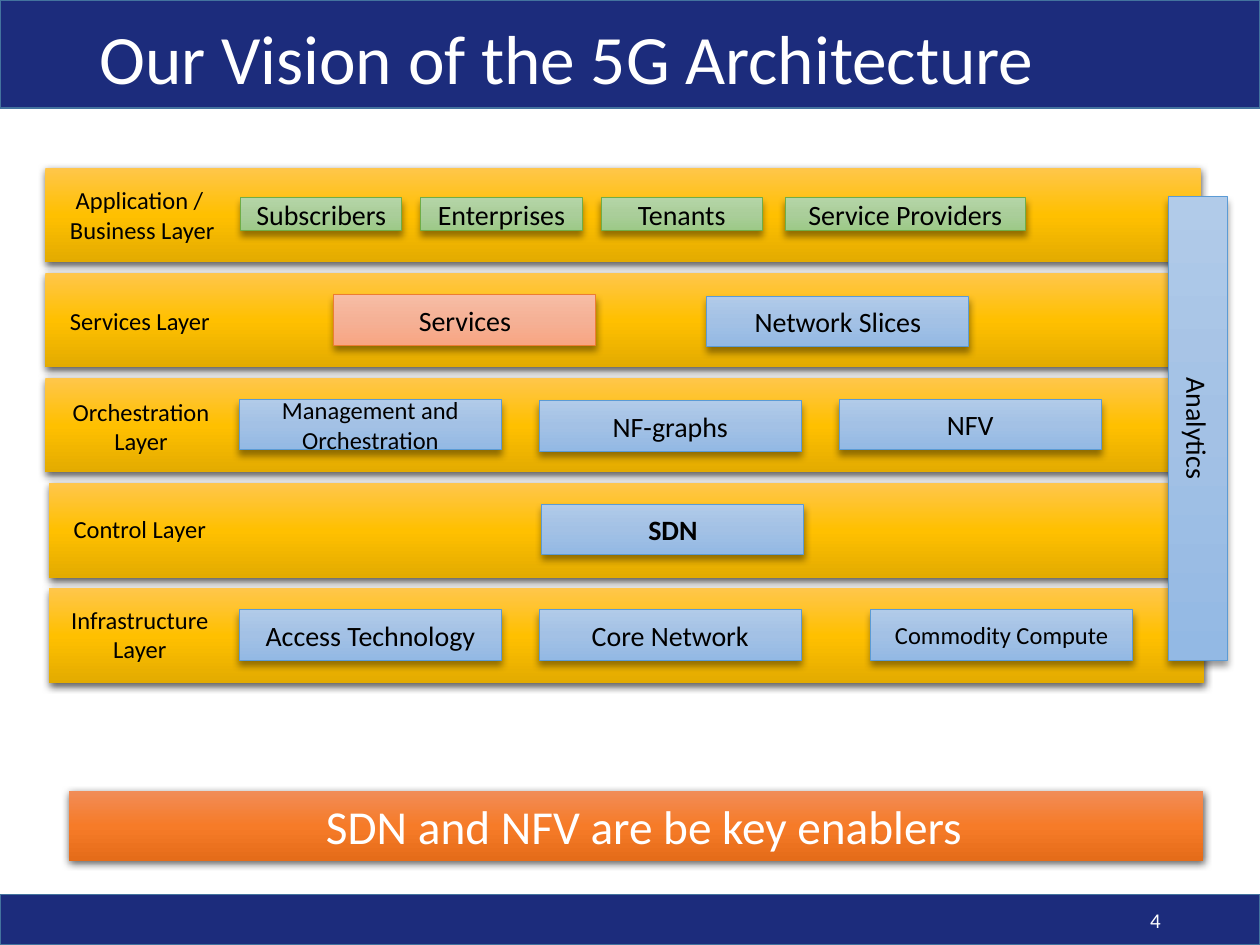
from lxml.etree import SubElement
from pptx import Presentation
from pptx.dml.color import RGBColor
from pptx.enum.shapes import MSO_SHAPE
from pptx.enum.text import MSO_ANCHOR, MSO_AUTO_SIZE, PP_ALIGN
from pptx.oxml.ns import qn
from pptx.util import Inches, Pt

COLORS = {"navy": "1C2C7C", "edge": "43739E", "white": "FFFFFF", "black": "000000",
          "blue": "5B9BD5", "green": "70AD47", "red": "ED7D31"}
FADES = {"gold": ("FFC64B", "FFC000", "E3AB00"), "orange": ("F18C57", "F67B28", "E56C19"),
         "blue": ("B1CBE9", "A3C1E5", "93B9E4"), "green": ("B5D5A7", "AACE9A", "9CC987"),
         "red": ("F7BDA5", "F5B196", "F8A582")}
WIDE, HIGH = 2.08, 0.4
LAYERS = [
    (0.36, "Application / \nBusiness Layer", (0.45, 1.42, 1.36, 0.57),
     [("Subscribers", 1.91, 1.57, 1.28, 0.26, "green", 16),
      ("Enterprises", 3.34, 1.57, 1.28, 0.26, "green", 16),
      ("Tenants", 4.77, 1.57, 1.28, 0.26, "green", 16),
      ("Service Providers", 6.23, 1.57, 1.91, 0.26, "green", 16)]),
    (0.36, "Services Layer", (0.45, 2.38, 1.32, 0.34),
     [("Services", 2.65, 2.34, WIDE, HIGH, "red", 16),
      ("Network Slices", 5.61, 2.35, WIDE, HIGH, "blue", 16)]),
    (0.36, "Orchestration\vLayer", (0.47, 3.1, 1.3, 0.57),
     [("Management and\vOrchestration", 1.9, 3.17, WIDE, HIGH, "blue", 14),
      ("NF-graphs", 4.28, 3.18, WIDE, HIGH, "blue", 16),
      ("NFV", 6.66, 3.17, WIDE, HIGH, "blue", 16)]),
    (0.39, "Control Layer", (0.48, 4.03, 1.26, 0.34),
     [("SDN", 4.3, 4, WIDE, HIGH, "blue", 16)]),
    (0.39, "Infrastructure\vLayer", (0.46, 4.75, 1.3, 0.57),
     [("Access Technology", 1.9, 4.84, WIDE, HIGH, "blue", 16),
      ("Core Network", 4.28, 4.84, WIDE, HIGH, "blue", 16),
      ("Commodity Compute", 6.91, 4.84, WIDE, HIGH, "blue", 14)]),
]


def paint(shape, fade):
    """Fill a shape with a three-stop vertical gradient."""
    shape.fill.gradient()
    shape.fill.gradient_angle = 270
    stops = shape._element.spPr.find(qn("a:gradFill")).find(qn("a:gsLst"))
    for stop in list(stops):
        stops.remove(stop)
    for spot, tone in zip((0, 50000, 100000), FADES[fade]):
        stop = SubElement(stops, qn("a:gs"), pos=str(spot))
        SubElement(stop, qn("a:srgbClr"), val=tone)


def shade(shape, blur, dist, alpha):
    """Give a shape a soft black shadow that falls downward."""
    shape.shadow.inherit = False
    group = shape._element.spPr.find(qn("a:effectLst"))
    drop = SubElement(group, qn("a:outerShdw"), blurRad=str(Pt(blur)), dist=str(Pt(dist)),
                      dir="5400000", algn="ctr", rotWithShape="0")
    tone = SubElement(drop, qn("a:srgbClr"), val=COLORS["black"])
    SubElement(tone, qn("a:alpha"), val=str(alpha * 1000))


def write(shape, text, size, color="black", align=PP_ALIGN.CENTER, anchor=MSO_ANCHOR.MIDDLE):
    """Set the text of a shape and format every run."""
    frame = shape.text_frame
    frame.text = text
    frame.vertical_anchor = anchor
    for par in frame.paragraphs:
        par.alignment = align
        for run in par.runs:
            run.font.name = "Calibri"
            run.font.size = Pt(size)
            run.font.bold = text == "SDN"
            run.font.color.rgb = RGBColor.from_string(COLORS[color])


def add_rect(slide, *box):
    """Add a plain rectangle."""
    return slide.shapes.add_shape(MSO_SHAPE.RECTANGLE, *map(Inches, box))


def add_text(slide, box, wrap=True):
    """Add an empty text box."""
    shape = slide.shapes.add_textbox(*map(Inches, box))
    shape.text_frame.word_wrap = wrap
    return shape


def add_band(slide, top, high):
    """Add a navy band across the slide."""
    band = add_rect(slide, 0, top, 10, high)
    band.shadow.inherit = False
    band.fill.solid()
    band.fill.fore_color.rgb = RGBColor.from_string(COLORS["navy"])
    band.line.color.rgb = RGBColor.from_string(COLORS["edge"])
    band.line.width = Pt(1)


def add_bar(slide, box, fade):
    """Add a wide gradient bar without an outline."""
    bar = add_rect(slide, *box)
    paint(bar, fade)
    bar.line.fill.background()
    shade(bar, 4.5, 1.5, 63)
    return bar


def add_block(slide, text, left, top, wide, high, hue, size):
    """Add an outlined gradient block with a caption."""
    block = add_rect(slide, left, top, wide, high)
    paint(block, hue)
    block.line.color.rgb = RGBColor.from_string(COLORS[hue])
    block.line.width = Pt(0.5)
    shade(block, 4, 3, 40)
    write(block, text, size)
    return block


def add_layer(slide, top, left, name, box, blocks):
    """Add one layer with its name and its blocks."""
    add_bar(slide, (left, top, 9.17, 0.75), "gold")
    label = add_text(slide, box, False)
    write(label, name, 14, anchor=MSO_ANCHOR.TOP)
    label.text_frame.auto_size = MSO_AUTO_SIZE.SHAPE_TO_FIT_TEXT
    for block in blocks:
        add_block(slide, *block)


def add_claim(slide):
    """Add the closing statement bar."""
    bar = add_bar(slide, (0.55, 6.28, 9, 0.55), "orange")
    write(bar, "SDN and NFV are be key enablers", 27, "white", anchor=MSO_ANCHOR.TOP)
    par = bar.text_frame.paragraphs[0]
    par.space_before = Pt(4)
    par._p.get_or_add_pPr().set("marL", str(Inches(0.12)))


def main():
    """Build the slide and save it."""
    deck = Presentation()
    deck.slide_width, deck.slide_height = Inches(10), Inches(7.5)
    slide = deck.slides.add_slide(deck.slide_layouts[6])
    add_band(slide, 7.1, 0.4)
    add_band(slide, 0, 0.86)
    title = add_text(slide, (0.69, 0.12, 8.62, 0.74))
    write(title, "Our Vision of the 5G Architecture", 39.6, "white", PP_ALIGN.LEFT)
    title.text_frame.paragraphs[0].line_spacing = 0.9
    write(add_text(slide, (7.06, 7.1, 2.25, 0.4)), "4", 12, "white", PP_ALIGN.RIGHT)
    add_claim(slide)
    for row, layer in enumerate(LAYERS):
        add_layer(slide, 1.33 + row * 0.835, *layer)
    side = add_block(slide, "Analytics", 9.27, 1.56, 0.47, 3.68, "blue", 16)
    side.text_frame._txBody.bodyPr.set("vert", "vert")
    deck.save("out.pptx")


if __name__ == "__main__":
    main()
